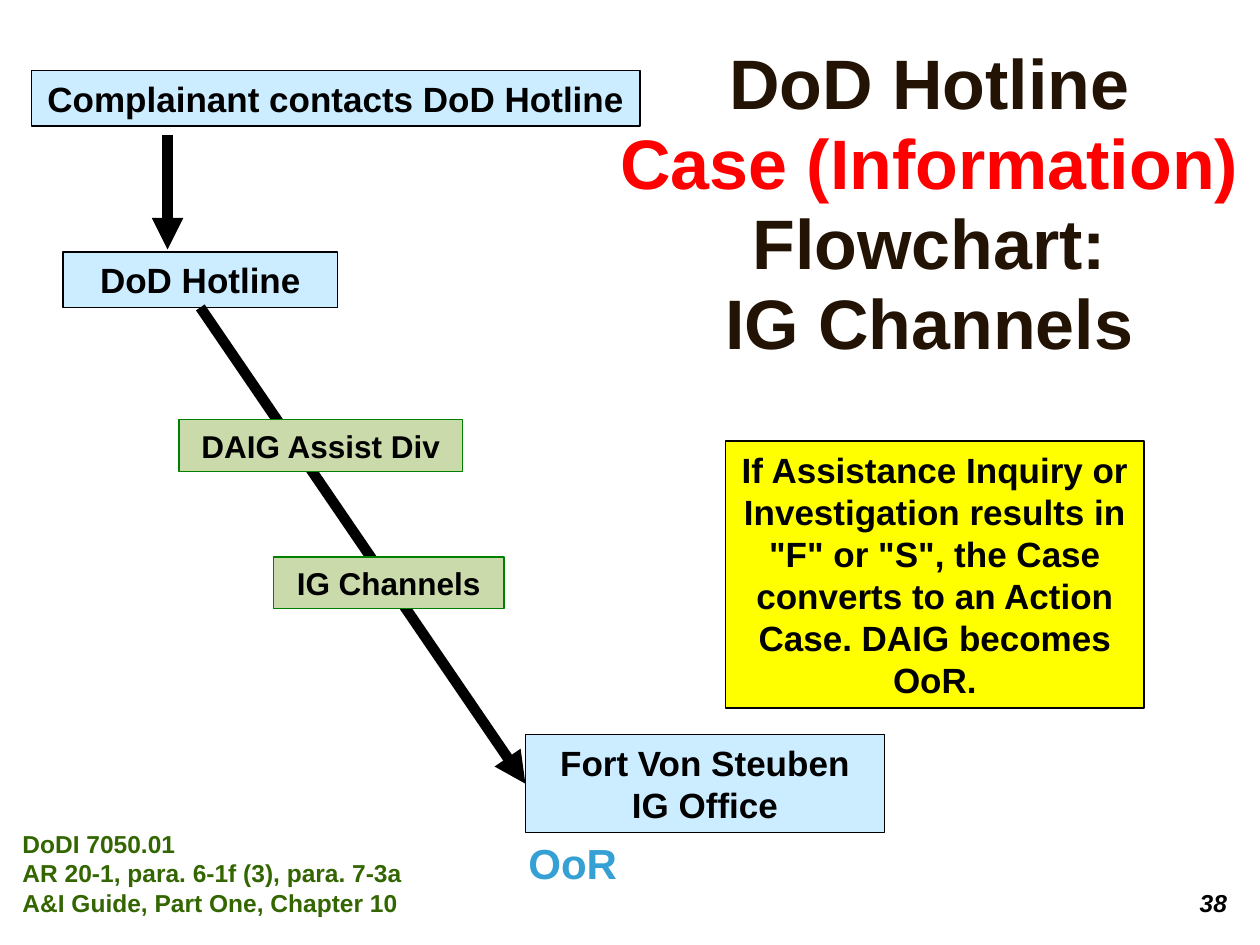
from lxml.etree import SubElement
from pptx import Presentation
from pptx.dml.color import RGBColor
from pptx.enum.shapes import MSO_CONNECTOR, MSO_SHAPE
from pptx.enum.text import MSO_ANCHOR, PP_ALIGN
from pptx.oxml.ns import qn
from pptx.util import Inches, Pt

FONT = "Arial"
BLACK, BROWN, RED = "000000", "221304", "FF0000"
BLUE_FILL, GREEN_FILL, YELLOW_FILL = "CCECFF", "CADAAA", "FFFF00"
GREEN_LINE = "008000"

TITLE = [("DoD Hotline\v", BROWN), ("Case (Information)", RED),
         (" Flowchart:\vIG Channels", BROWN)]

# name: (text, (left, top, width, height), fill, line, size)
STATIONS = {
    "complainant": ("Complainant contacts DoD Hotline", (0.25, 0.56, 4.83, 0.44),
                    BLUE_FILL, BLACK, 20),
    "office": ("Fort Von Steuben\nIG Office", (4.17, 5.83, 2.85, 0.78),
               BLUE_FILL, BLACK, 20),
    "hotline": ("DoD Hotline", (0.5, 2, 2.18, 0.44), BLUE_FILL, BLACK, 20),
}
OVERLAYS = {
    "assist division": ("DAIG Assist Div", (1.42, 3.33, 2.25, 0.41),
                        GREEN_FILL, GREEN_LINE, 18),
    "channels": ("IG Channels", (2.17, 4.42, 1.83, 0.41),
                 GREEN_FILL, GREEN_LINE, 18),
    "note": ('If Assistance Inquiry or Investigation results in "F" or "S", '
             "the Case converts to an Action Case. DAIG becomes OoR.",
             (5.76, 3.5, 3.32, 2.12), YELLOW_FILL, BLACK, 20),
}

# (text, (left, top, width, height), size, colour, alignment, wrap, italic)
LABELS = [
    ("38", (9.42, 7, 0.42, 0.33), 14, BLACK, PP_ALIGN.CENTER, False, True),
    ("OoR", (4.09, 6.6, 0.91, 0.5), 24, "35A0D3", PP_ALIGN.CENTER, False, False),
    ("DoDI 7050.01\nAR 20-1, para. 6-1f (3), para. 7-3a\n"
     "A&I Guide, Part One, Chapter 10",
     (0.08, 6.53, 4.17, 0.81), 14, "336600", PP_ALIGN.LEFT, True, False),
]


def rgb(value):
    return RGBColor.from_string(value)


def style_font(font, size, color, italic=False):
    font.name, font.size, font.bold = FONT, Pt(size), True
    font.italic = italic
    font.color.rgb = rgb(color)


def fill_text(frame, text, size, color, alignment, wrap=True, italic=False):
    frame.text = text
    frame.word_wrap = wrap
    for paragraph in frame.paragraphs:
        paragraph.alignment = alignment
        for run in paragraph.runs:
            style_font(run.font, size, color, italic)


def add_title(slide):
    shape = slide.shapes.add_textbox(*map(Inches, (4.75, 0.42, 5.25, 2.42)))
    frame = shape.text_frame
    frame.word_wrap = True
    frame.vertical_anchor = MSO_ANCHOR.MIDDLE
    paragraph = frame.paragraphs[0]
    paragraph.text = ""
    paragraph.alignment = PP_ALIGN.CENTER
    paragraph.line_spacing = 0.95
    for text, color in TITLE:
        for index, line in enumerate(text.split("\v")):
            if index:
                paragraph.add_line_break()
            run = paragraph.add_run()
            run.text = line
            if line:
                style_font(run.font, 40, color)
            else:
                paragraph._p.remove(run._r)


def add_box(slide, text, place, fill, line, size):
    shape = slide.shapes.add_shape(MSO_SHAPE.RECTANGLE, *map(Inches, place))
    shape.shadow.inherit = False
    shape.fill.solid()
    shape.fill.fore_color.rgb = rgb(fill)
    shape.line.color.rgb = rgb(line)
    shape.line.width = Pt(0.75)
    fill_text(shape.text_frame, text, size, BLACK, PP_ALIGN.CENTER)
    return shape


def add_arrow(slide, start, end):
    arrow = slide.shapes.add_connector(MSO_CONNECTOR.STRAIGHT,
                                       *map(Inches, start + end))
    arrow.line.color.rgb = rgb(BLACK)
    arrow.line.width = Pt(6)
    SubElement(arrow.line._get_or_add_ln(), qn("a:tailEnd"), type="triangle")
    SubElement(arrow._element.spPr, qn("a:effectLst"))
    return arrow


def main():
    presentation = Presentation()
    presentation.slide_width, presentation.slide_height = Inches(10), Inches(7.5)
    slide = presentation.slides.add_slide(presentation.slide_layouts[6])

    add_title(slide)
    boxes = {name: add_box(slide, *box) for name, box in STATIONS.items()}

    add_arrow(slide, (1.33, 1.07), (1.33, 1.98))
    referral = add_arrow(slide, (1.59, 2.44), (4.17, 6.22))
    referral.begin_connect(boxes["hotline"], 2)
    referral.end_connect(boxes["office"], 1)

    for box in OVERLAYS.values():
        add_box(slide, *box)
    for text, place, *style in LABELS:
        label = slide.shapes.add_textbox(*map(Inches, place))
        fill_text(label.text_frame, text, *style)

    presentation.save("out.pptx")


if __name__ == "__main__":
    main()
